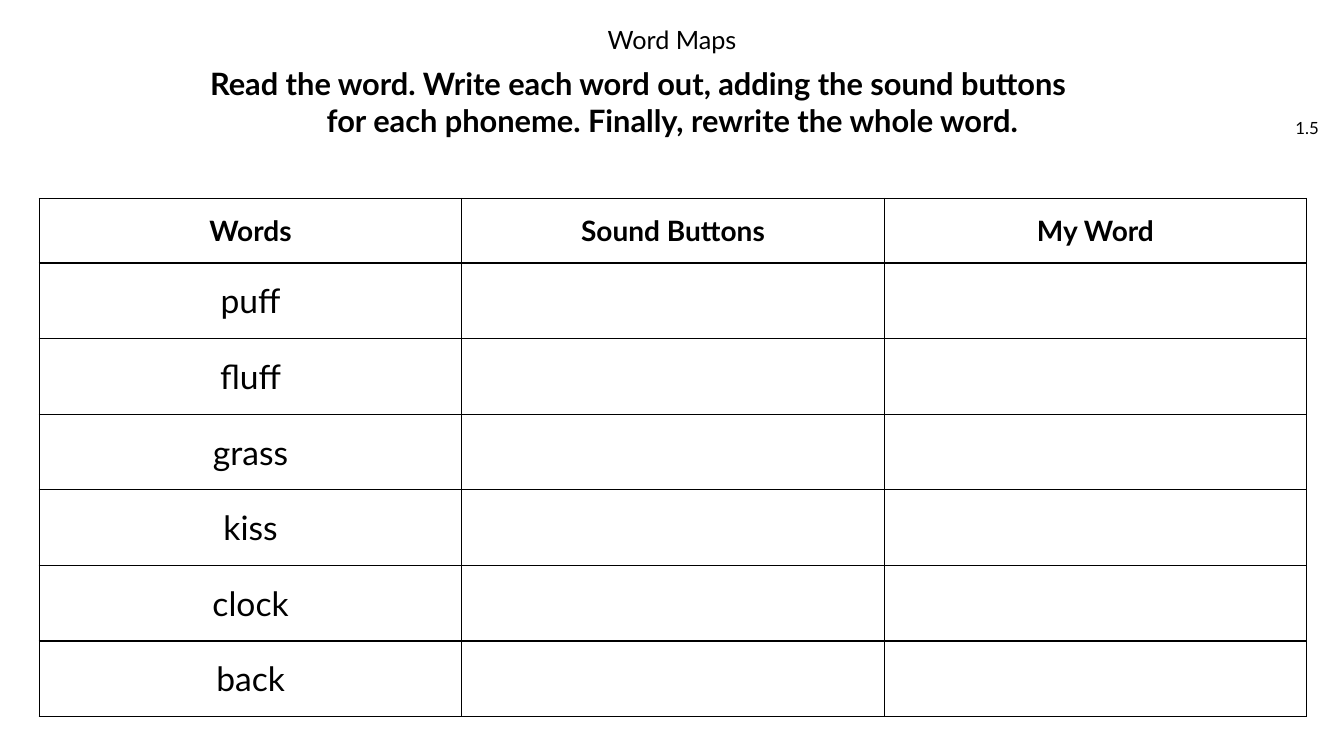
import pptx
import pptx.dml.color
import pptx.enum.text
import pptx.oxml.ns
import pptx.util
from lxml import etree

Inches = pptx.util.Inches
Pt = pptx.util.Pt
Align = pptx.enum.text.PP_ALIGN
Anchor = pptx.enum.text.MSO_ANCHOR
qn = pptx.oxml.ns.qn

BLACK = pptx.dml.color.RGBColor(0x00, 0x00, 0x00)
WHITE = pptx.dml.color.RGBColor(0xFF, 0xFF, 0xFF)

HEADINGS = ["Words", "Sound Buttons", "My Word"]
WORDS = ["puff", "fluff", "grass", "kiss", "clock", "back"]


class Worksheet:
    font_name = "Lato"
    text_color = BLACK
    border_width = Pt(1)

    def __init__(self, slide):
        self.slide = slide

    def add_text_run(self, paragraph, text, size, bold=False, align=Align.CENTER):
        paragraph.alignment = align
        run = paragraph.add_run()
        run.text = text
        run.font.name = self.font_name
        run.font.size = Pt(size)
        run.font.bold = bold
        run.font.color.rgb = self.text_color

    def add_text_box(self, left, top, width, height, text, size, bold=False,
                     align=Align.CENTER, anchor=Anchor.MIDDLE):
        box = self.slide.shapes.add_textbox(
            Inches(left), Inches(top), Inches(width), Inches(height))
        frame = box.text_frame
        frame.word_wrap = True
        frame.vertical_anchor = anchor
        self.add_text_run(frame.paragraphs[0], text, size, bold, align)
        return frame

    def add_borders(self, cell):
        properties = cell._tc.get_or_add_tcPr()
        for position, side in enumerate(("a:lnL", "a:lnR", "a:lnT", "a:lnB")):
            line = etree.Element(qn(side), w=str(self.border_width))
            fill = etree.SubElement(line, qn("a:solidFill"))
            etree.SubElement(fill, qn("a:srgbClr"), val=str(BLACK))
            properties.insert(position, line)

    def add_word_table(self, left, top, column_width, row_heights, rows):
        table = self.slide.shapes.add_table(
            len(rows), len(rows[0]), Inches(left), Inches(top),
            Inches(column_width * len(rows[0])), Inches(sum(row_heights))).table
        table.first_row = False
        table.horz_banding = False
        for column in table.columns:
            column.width = Inches(column_width)
        for row, height, texts in zip(table.rows, row_heights, rows):
            row.height = Inches(height)
            is_heading = texts is rows[0]
            for cell, text in zip(row.cells, texts):
                cell.fill.solid()
                cell.fill.fore_color.rgb = WHITE
                cell.vertical_anchor = Anchor.MIDDLE
                self.add_borders(cell)
                if text:
                    self.add_text_run(cell.text_frame.paragraphs[0], text,
                                      20 if is_heading else 24, is_heading)


def main():
    presentation = pptx.Presentation()
    presentation.slide_width = Inches(13.33)
    presentation.slide_height = Inches(7.5)
    slide = presentation.slides.add_slide(presentation.slide_layouts[6])
    sheet = Worksheet(slide)

    # Unit number
    sheet.add_text_box(12.55, 1.07, 0.63, 0.4, "1.5", 12, align=Align.RIGHT)

    # Instruction, its first line set further left than the second
    instruction = sheet.add_text_box(
        1.97, 0.6, 9.4, 0.82,
        "Read the word. Write each word out, adding the sound buttons "
        "for each phoneme. Finally, rewrite the whole word.", 22, bold=True)
    hang = Inches(0.68)
    instruction.margin_left = 0
    instruction.margin_right = hang
    properties = instruction.paragraphs[0]._p.get_or_add_pPr()
    properties.set("marL", str(hang))
    properties.set("indent", str(-hang))

    # Title
    title = sheet.add_text_box(3.82, 0.23, 5.69, 0.35, "Word Maps", 18,
                               anchor=Anchor.TOP)
    title.paragraphs[0].line_spacing = 0.9

    # Word table
    rows = [HEADINGS] + [[word, "", ""] for word in WORDS]
    sheet.add_word_table(0.39, 1.97, 4.19, [0.64] + [0.75] * len(WORDS), rows)

    presentation.save("out.pptx")


if __name__ == "__main__":
    main()
